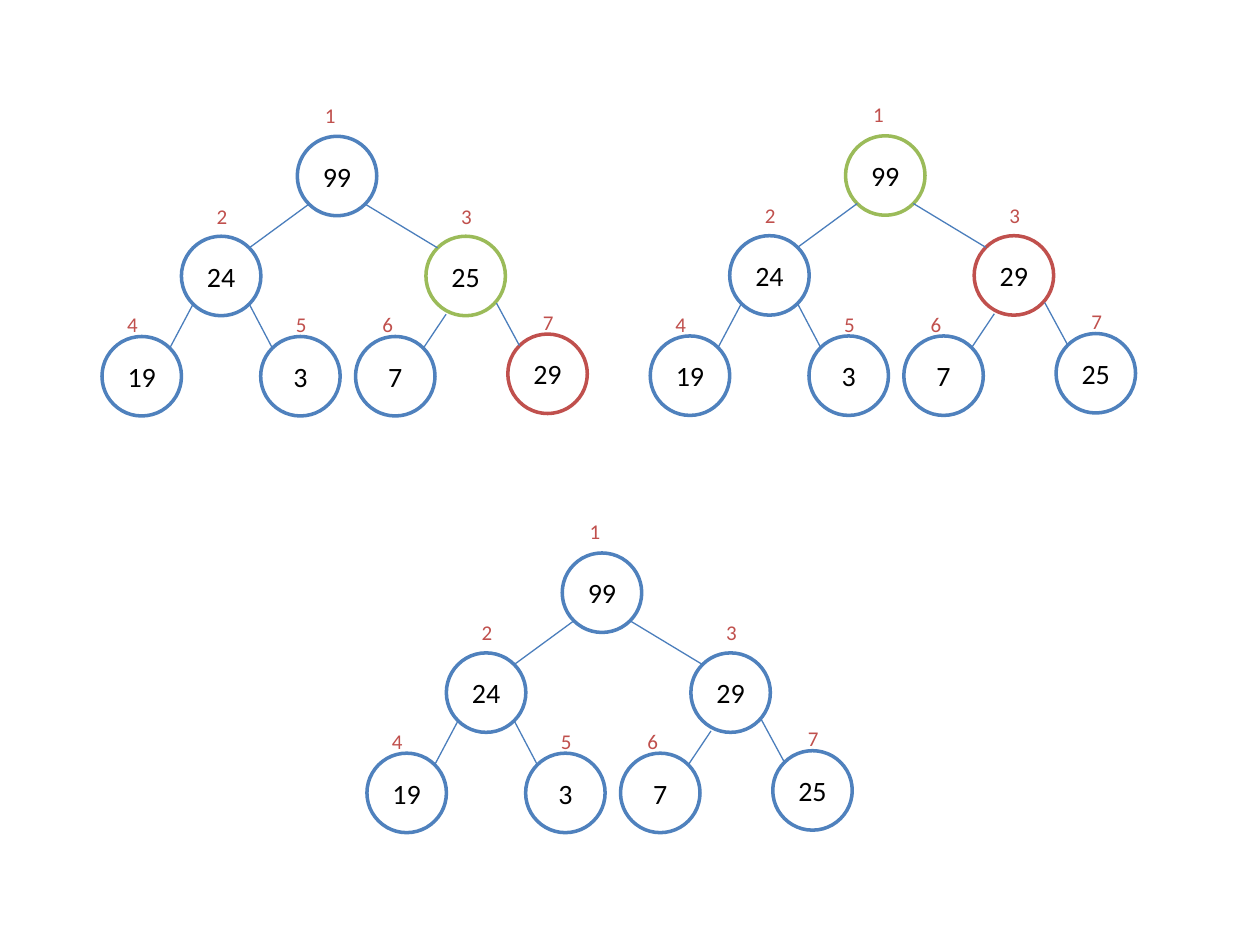
from dataclasses import dataclass

from lxml import etree
from pptx import Presentation
from pptx.dml.color import RGBColor
from pptx.enum.shapes import MSO_CONNECTOR, MSO_SHAPE
from pptx.enum.text import MSO_ANCHOR, MSO_AUTO_SIZE, PP_ALIGN
from pptx.oxml.ns import qn
from pptx.util import Pt

ELLIPSE = MSO_SHAPE.OVAL
STRAIGHT = MSO_CONNECTOR.STRAIGHT
MIDDLE = MSO_ANCHOR.MIDDLE
CENTER = PP_ALIGN.CENTER
FIT_SHAPE = MSO_AUTO_SIZE.SHAPE_TO_FIT_TEXT

BLUE, GREEN, RED = "4F81BD", "9BBB59", "C0504D"
DIAMETER = 45.4
NEAR, FAR = 6.7, 38.7

NODE_PLACES = [
    (111.6, 0),
    (45.4, 57.1),
    (185.1, 57.1),
    (0, 114.4),
    (90.7, 114.4),
    (144.9, 114.4),
    (231.9, 113),
]
LABEL_SHIFTS = [
    (8.6, -23),
    (13, -22.5),
    (13, -22.5),
    (7.2, -17.8),
    (13, -17.8),
    (8.2, -17.8),
    (13, -17.8),
]
EDGE_STARTS = {6: (11.5, 44.6), 7: (40.3, 38.2)}

TREES = [
    (58.3, 77.9, [99, 24, 25, 19, 3, 7, 29], {3: GREEN, 7: RED}),
    (371.6, 77.6, [99, 24, 29, 19, 3, 7, 25], {1: GREEN, 3: RED}),
    (209.7, 316, [99, 24, 29, 19, 3, 7, 25], {}),
]


def color(hex_text):
    return RGBColor.from_string(hex_text)


@dataclass
class HeapSlide:
    page: object
    font: str = "Calibri"
    node_fill: str = "FFFFFF"
    node_text: str = "000000"
    label_text: str = RED
    edge_color: str = "4B7EBC"

    def set_text(self, frame, text, size, text_color):
        para = frame.paragraphs[0]
        para.text = text
        para.font.name = self.font
        para.font.size = Pt(size)
        para.font.color.rgb = color(text_color)
        return para

    def node(self, group, left, top, text, outline):
        circle = group.shapes.add_shape(
            ELLIPSE, Pt(left), Pt(top), Pt(DIAMETER), Pt(DIAMETER)
        )
        circle.shadow.inherit = False
        circle.fill.solid()
        circle.fill.fore_color.rgb = color(self.node_fill)
        circle.line.color.rgb = color(outline)
        circle.line.width = Pt(2)
        circle.text_frame.vertical_anchor = MIDDLE
        para = self.set_text(circle.text_frame, text, 16, self.node_text)
        para.alignment = CENTER

    def edge(self, group, start, end):
        line = group.shapes.add_connector(STRAIGHT, *map(Pt, start + end))
        line.line.color.rgb = color(self.edge_color)
        line.line.width = Pt(0.75)
        etree.SubElement(line._element.spPr, qn("a:effectLst"))

    def label(self, group, left, top, text):
        box = group.shapes.add_textbox(Pt(left), Pt(top), Pt(20.9), Pt(21.8))
        box.text_frame.word_wrap = False
        box.text_frame.auto_size = FIT_SHAPE
        self.set_text(box.text_frame, text, 12, self.label_text)

    def tree(self, left, top, values, highlights):
        group = self.page.shapes.add_group_shape()
        places = [(left + x, top + y) for x, y in NODE_PLACES]
        for index, (place, value) in enumerate(zip(places, values), 1):
            self.node(group, *place, str(value), highlights.get(index, BLUE))
        for index in range(2, len(places) + 1):
            parent_x, parent_y = places[index // 2 - 1]
            child_x, child_y = places[index - 1]
            start_x, end_x = (NEAR, FAR) if index % 2 == 0 else (FAR, NEAR)
            shift_x, shift_y = EDGE_STARTS.get(index, (start_x, FAR))
            self.edge(
                group,
                (parent_x + shift_x, parent_y + shift_y),
                (child_x + end_x, child_y + NEAR),
            )
        for index, (place, shift) in enumerate(zip(places, LABEL_SHIFTS), 1):
            self.label(group, place[0] + shift[0], place[1] + shift[1], str(index))


def main():
    deck = Presentation()
    deck.slide_width, deck.slide_height = Pt(720), Pt(540)
    heap_slide = HeapSlide(deck.slides.add_slide(deck.slide_layouts[6]))
    for tree in TREES:
        heap_slide.tree(*tree)
    deck.save("out.pptx")


if __name__ == "__main__":
    main()
